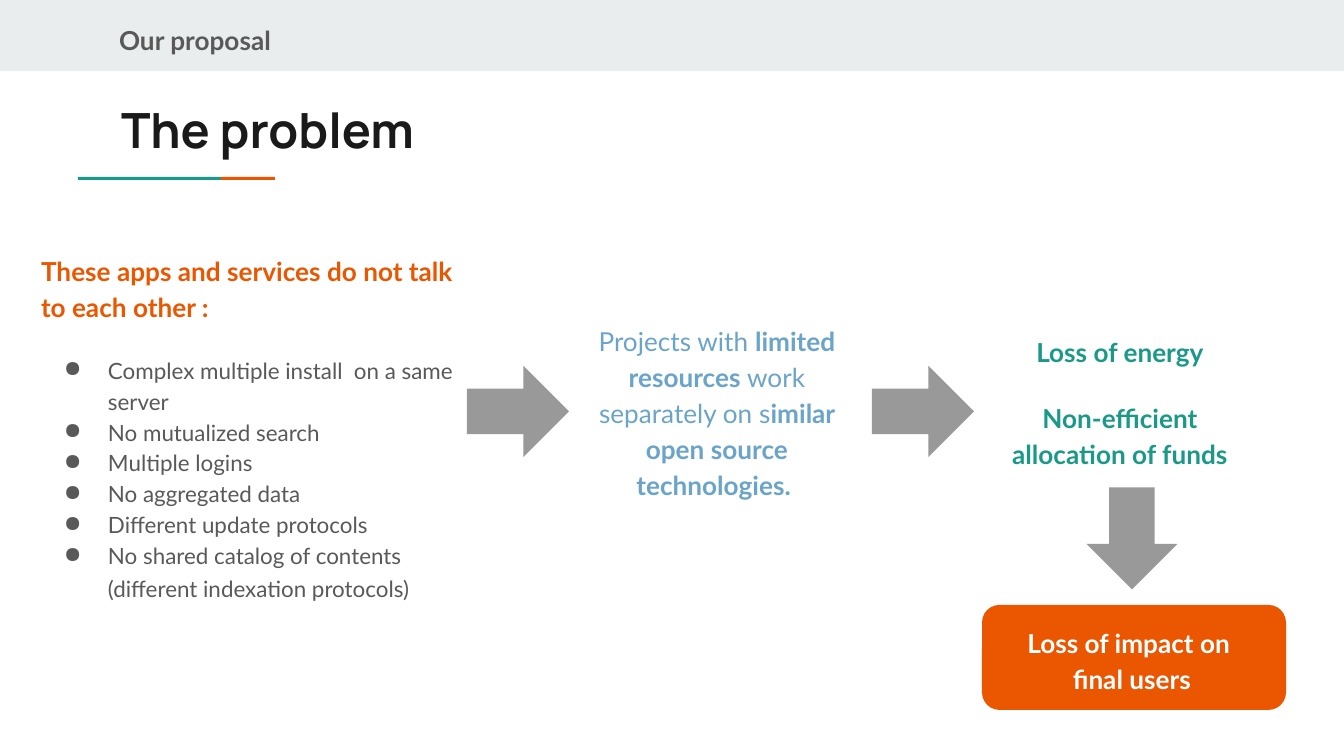
from dataclasses import dataclass

from lxml.etree import SubElement
from pptx import Presentation
from pptx.dml.color import RGBColor
from pptx.enum.shapes import MSO_SHAPE
from pptx.enum.text import PP_ALIGN
from pptx.oxml.ns import qn
from pptx.util import Emu, Pt


@dataclass(frozen=True)
class Theme:
    band: str = "E9EDEE"
    orange: str = "EB5600"
    green: str = "1A9988"
    blue: str = "6AA4C8"
    ink: str = "1A1A1A"
    grey: str = "595959"
    arrow: str = "999999"
    white: str = "FFFFFF"
    body_font: str = "Lato"
    title_font: str = "Manrope"
    title: int = 26
    text: int = 14
    tail: int = 13
    item: int = 12


T = Theme()
W, H = 1344, 756
INSET, INDENT, HANG = 13, 67, 44

# Content: each paragraph is a list of (text, bold) runs
HEADER = [[("Our proposal", True)]]
TITLE = [[("The problem", True)]]
CAUSE = [[("These apps and services do not talk to each other :", True)]]
ISSUES = [
    "Complex multiple install  on a same server",
    "No mutualized search",
    "Multiple logins",
    "No aggregated data",
    "Different update protocols",
    "No shared catalog of contents (different indexation protocols)",
]
PROJECTS = [[
    ("Projects with ", False), ("limited resources ", True),
    ("work separately on s", False), ("imilar open source technologies. ", True),
]]
LOSSES = [[("Loss of energy", True)], [("Non-efficient allocation of funds", True)]]
IMPACT = [[("Loss of impact on \nfinal users", True)]]

# Shapes: kind, box, colour, rotation
ARROW_W, ARROW_H, ARROW_Y = 102, 91, 366
SHAPES = [
    (MSO_SHAPE.RECTANGLE, (0, 0, W, 71), T.band, 0),
    (MSO_SHAPE.RECTANGLE, (78, 177, 143, 3), T.green, 0),
    (MSO_SHAPE.RECTANGLE, (221, 177, 54, 3), T.orange, 0),
    (MSO_SHAPE.ROUNDED_RECTANGLE, (982, 605, 304, 105), T.orange, 0),
] + [
    (MSO_SHAPE.RIGHT_ARROW, (x, y, ARROW_W, ARROW_H), T.arrow, rotation)
    for x, y, rotation in [(467, ARROW_Y, 0), (872, ARROW_Y, 0), (1081, 493, 90)]
]


def px(n):
    return Emu(round(n * 914400 / 134.4))


def add_run(p, text, size, color, bold, font=T.body_font):
    for i, line in enumerate(text.split("\n")):
        if i:
            p.add_line_break()
        r = p.add_run()
        r.text = line
        r.font.name, r.font.size, r.font.bold = font, Pt(size), bold
        r.font.color.rgb = RGBColor.from_string(color)


def add_text(s, box, paragraphs, color, size=T.text, font=T.body_font,
             align=PP_ALIGN.LEFT, spacing=1.15):
    tf = s.shapes.add_textbox(*map(px, box)).text_frame
    tf.word_wrap = True
    tf.margin_left = tf.margin_right = tf.margin_top = tf.margin_bottom = px(INSET)
    for i, runs in enumerate(paragraphs):
        p = tf.add_paragraph() if i else tf.paragraphs[0]
        p.alignment, p.line_spacing = align, spacing
        if i:
            p.space_before = Pt(16)
        for text, bold in runs:
            add_run(p, text, size, color, bold, font)
    return tf


def add_bullet(tf, text, space_before):
    p = tf.add_paragraph()
    p.line_spacing, p.space_before = 1.15, Pt(space_before)
    pPr = p._p.get_or_add_pPr()
    pPr.set("marL", str(px(INDENT)))
    pPr.set("indent", str(-px(HANG)))
    color = SubElement(pPr, qn("a:buClr"))
    SubElement(color, qn("a:srgbClr"), val=T.grey)
    SubElement(pPr, qn("a:buChar"), char="●")
    add_run(p, text, T.item, T.grey, False)
    return p


def main():
    prs = Presentation()
    prs.slide_width, prs.slide_height = px(W), px(H)
    s = prs.slides.add_slide(prs.slide_layouts[6])

    # Band, title underline, impact box and arrows
    for kind, box, color, rotation in SHAPES:
        sp = s.shapes.add_shape(kind, *map(px, box))
        sp.shadow.inherit = False
        sp.fill.solid()
        sp.fill.fore_color.rgb = RGBColor.from_string(color)
        sp.line.fill.background()
        sp.rotation = rotation

    # Headings
    add_text(s, (106, 11, 262, 54), HEADER, T.grey, spacing=1.0)
    add_text(s, (108, 87, 388, 79), TITLE, T.ink, T.title, T.title_font, spacing=1.0)

    # Cause and its list of issues
    tf = add_text(s, (28, 238, 466, 332), CAUSE, T.orange)
    for i, issue in enumerate(ISSUES):
        p = add_bullet(tf, issue, 0 if i else 16)
    add_run(p, " ", T.tail, T.grey, False)

    # Consequences
    for box, paragraphs, color in [
        ((569, 308, 296, 239), PROJECTS, T.blue),
        ((972, 319, 296, 172), LOSSES, T.green),
        ((984, 610, 296, 103), IMPACT, T.white),
    ]:
        add_text(s, box, paragraphs, color, align=PP_ALIGN.CENTER)

    prs.save("out.pptx")


if __name__ == "__main__":
    main()
